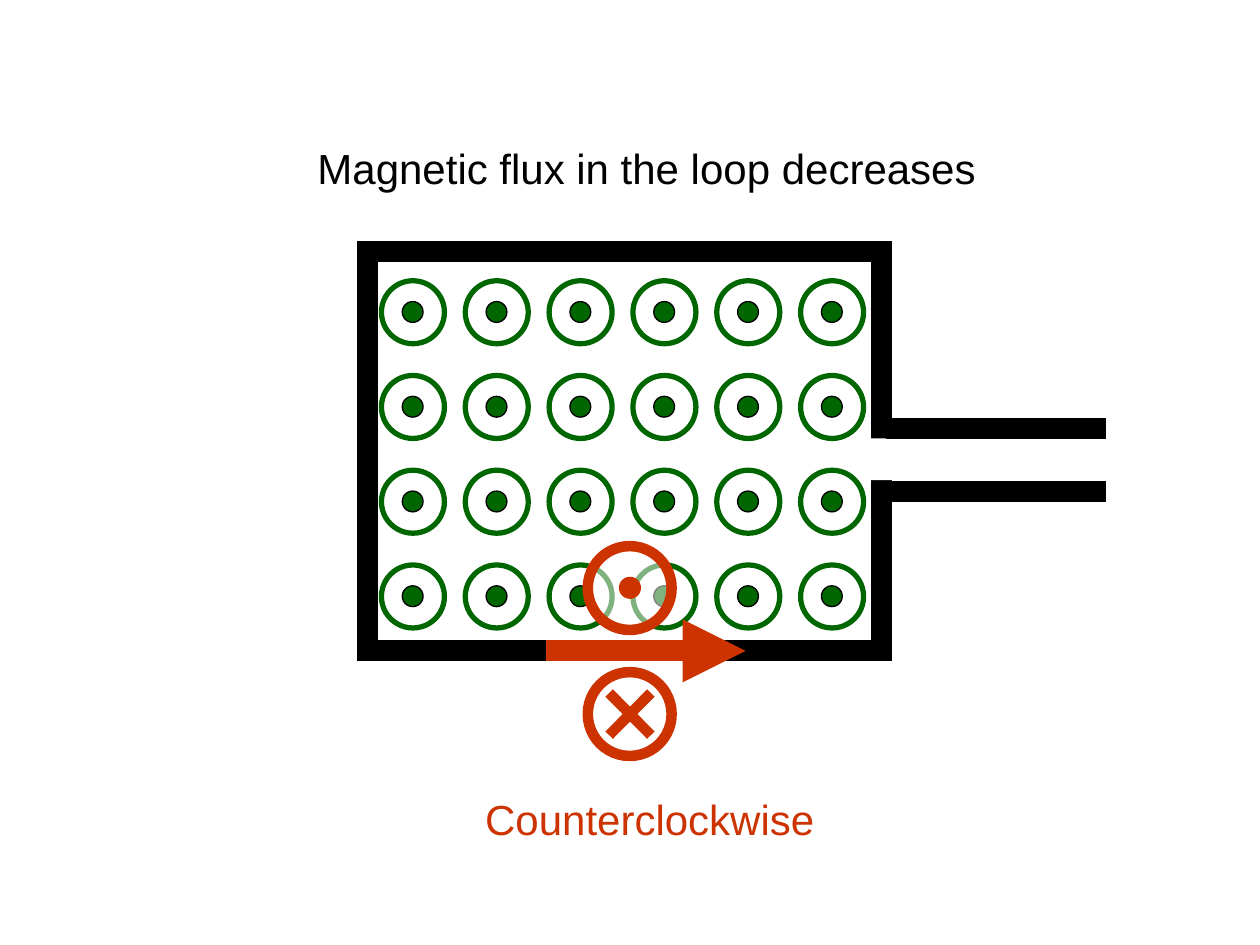
"""Build a slide on the current induced in a loop by decreasing magnetic flux."""
from lxml import etree
from pptx import Presentation
from pptx.dml.color import RGBColor
from pptx.enum.shapes import MSO_CONNECTOR, MSO_SHAPE
from pptx.enum.text import MSO_AUTO_SIZE
from pptx.oxml.ns import qn
from pptx.util import Cm, Pt

ELLIPSE = MSO_SHAPE.OVAL
RECTANGLE = MSO_SHAPE.RECTANGLE
STRAIGHT = MSO_CONNECTOR.STRAIGHT
FIT_TEXT = MSO_AUTO_SIZE.SHAPE_TO_FIT_TEXT

COLORS = {
    "wire": "000000",
    "field": "006600",
    "current": "CC3300",
    "paper": "FFFFFF",
}
FRAME_FORMAT = {"word_wrap": False, "auto_size": FIT_TEXT}
FONT_FORMAT = {"name": "Arial", "size": Pt(24)}


def draw_shape(group, kind, place, fill=None, line=None, weight=0.75):
    shape = group.shapes.add_shape(kind, *[Cm(length) for length in place])
    shape.shadow.inherit = False
    if fill:
        shape.fill.solid()
        shape.fill.fore_color.rgb = RGBColor.from_string(COLORS[fill])
    else:
        shape.fill.background()
    if line:
        shape.line.color.rgb = RGBColor.from_string(COLORS[line])
        shape.line.width = Pt(weight)
    else:
        shape.line.fill.background()
    return shape


def draw_line(group, ends, color, weight):
    line = group.shapes.add_connector(STRAIGHT, *[Cm(length) for length in ends])
    line.line.color.rgb = RGBColor.from_string(COLORS[color])
    line.line.width = Pt(weight)
    etree.SubElement(line._element.spPr, qn("a:effectLst"))
    return line


deck = Presentation()
deck.slide_width = Cm(25.4)
deck.slide_height = Cm(19.05)
page = deck.slides.add_slide(deck.slide_layouts[6])
field, loop, current = [page.shapes.add_group_shape() for _ in range(3)]

for row in range(4):
    for column in range(6):
        left = 7.69 + 1.69 * column
        top = 5.66 + 1.91 * row
        draw_shape(field, ELLIPSE, (left, top, 1.27, 1.27), None, "field", 3)
        draw_shape(field, ELLIPSE, (left + 0.42, top + 0.42, 0.42, 0.42), "field", "wire")

coil = draw_shape(loop, RECTANGLE, (7.41, 5.08, 10.37, 8.04), None, "wire", 12)
etree.SubElement(coil.line._get_or_add_ln(), qn("a:miter"), lim="800000")
draw_shape(loop, RECTANGLE, (17.53, 8.84, 1.27, 0.84), "paper")
for height in (8.64, 9.91):
    draw_line(loop, (17.86, height, 22.3, height), "wire", 12)

for top in (13.55, 11.01):
    ring = draw_shape(current, ELLIPSE, (11.85, top, 1.69, 1.69), "paper", "current", 6)
    paper = ring.fill._xPr.find(qn("a:solidFill"))[0]
    etree.SubElement(paper, qn("a:alpha"), val="50000")
for start, end in ((13.97, 14.82), (14.82, 13.97)):
    draw_line(current, (12.28, start, 13.12, end), "current", 6)
draw_shape(current, ELLIPSE, (12.49, 11.64, 0.42, 0.42), "current", "current")
arrow = draw_line(current, (15.03, 13.12, 11.01, 13.12), "current", 12)
etree.SubElement(arrow.line._get_or_add_ln(), qn("a:headEnd"), type="triangle")

for parent, text, place, color in (
    (page, "Magnetic flux in the loop decreases", (6.15, 2.75, 13.92, 1.28), "wire"),
    (current, "Counterclockwise", (9.53, 15.88, 7.21, 1.28), "current"),
):
    box = parent.shapes.add_textbox(*[Cm(length) for length in place])
    for name, value in FRAME_FORMAT.items():
        setattr(box.text_frame, name, value)
    para = box.text_frame.paragraphs[0]
    span = para.add_run()
    span.text = text
    for name, value in FONT_FORMAT.items():
        setattr(span.font, name, value)
    span.font.color.rgb = RGBColor.from_string(COLORS[color])

deck.save("out.pptx")
